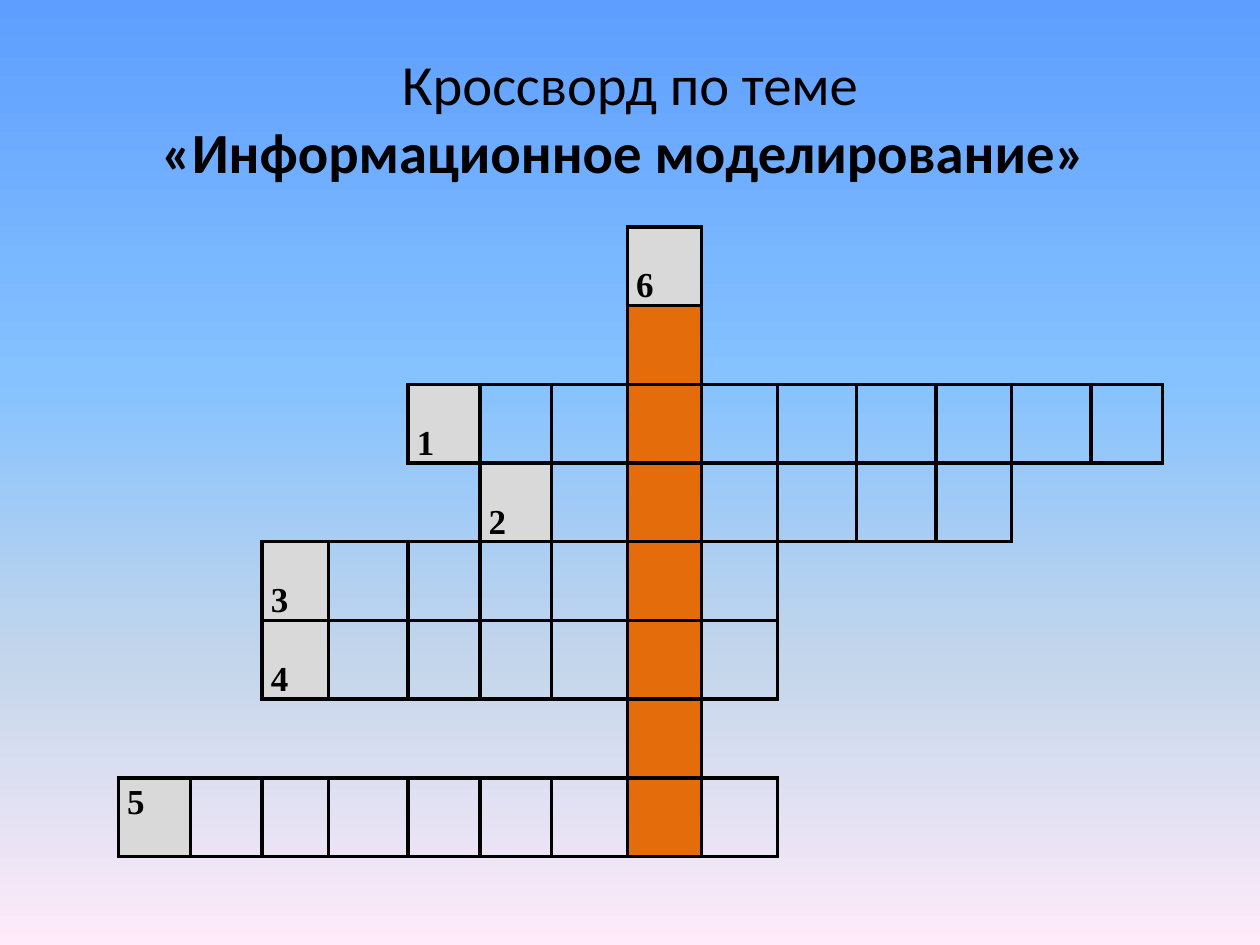
from lxml import etree
from pptx import Presentation
from pptx.dml.color import RGBColor
from pptx.enum.text import MSO_ANCHOR, PP_ALIGN
from pptx.oxml.ns import qn
from pptx.util import Inches, Pt

BLACK = RGBColor(0x00, 0x00, 0x00)
GREY = RGBColor(0xD9, 0xD9, 0xD9)
ORANGE = RGBColor(0xE4, 0x6C, 0x0A)
SKY_STOPS = [
    (0, RGBColor(0x5E, 0x9E, 0xFF)),
    (40, RGBColor(0x85, 0xC2, 0xFF)),
    (70, RGBColor(0xC4, 0xD6, 0xEB)),
    (100, RGBColor(0xFF, 0xEB, 0xFA)),
]
CENTER = PP_ALIGN.CENTER
MIDDLE, BOTTOM, TOP = MSO_ANCHOR.MIDDLE, MSO_ANCHOR.BOTTOM, MSO_ANCHOR.TOP
TITLE_ONLY = 5
NO_STYLE = "{2D5ABB26-0587-4C30-8999-92F81FD0307C}"
SIDES = {"a:lnL": (0, -1), "a:lnR": (0, 1), "a:lnT": (-1, 0), "a:lnB": (1, 0)}

COLUMN_WIDTHS = [0.57, 0.57, 0.53, 0.63, 0.57, 0.57, 0.6, 0.59, 0.6, 0.63, 0.63, 0.6, 0.63, 0.57]
ROW_COUNT = 8
ROW_HEIGHT = 0.625
KEY_COLUMN = 7
ACROSS_WORDS = [("1", 2, 4, 10), ("2", 3, 5, 7), ("3", 4, 2, 7), ("4", 5, 2, 7), ("5", 7, 0, 9)]


class CrosswordSlide:
    """Draws the parts of a crossword slide in one style."""

    def __init__(self, presentation):
        self.slide = presentation.slides.add_slide(presentation.slide_layouts[TITLE_ONLY])

    def background(self, stops):
        fill = self.slide.background.fill
        fill.gradient()
        fill.gradient_angle = 270
        stop_list = self.slide.element.find(".//" + qn("a:gsLst"))
        for stop in list(stop_list):
            stop_list.remove(stop)
        for position, color in stops:
            stop = etree.SubElement(stop_list, qn("a:gs"), pos=str(position * 1000))
            etree.SubElement(stop, qn("a:srgbClr"), val=str(color))

    def title(self, first_line, second_line):
        shape = self.slide.shapes.title
        shape.left, shape.top = Inches(0.5), Inches(0.3)
        shape.width, shape.height = Inches(9), Inches(1.25)
        shape.text_frame.vertical_anchor = MIDDLE
        paragraph = shape.text_frame.paragraphs[0]
        paragraph.alignment = CENTER
        paragraph.font.name = "Calibri"
        paragraph.add_run().text = first_line
        paragraph.add_line_break()
        strong = paragraph.add_run()
        strong.text = second_line
        strong.font.bold = True
        for run in paragraph.runs:
            run.font.size = Pt(32.4)
            run.font.color.rgb = BLACK

    def border(self, cell, side, visible):
        properties = cell._tc.get_or_add_tcPr()
        line = etree.SubElement(properties, qn(side), w=str(Pt(2.25) if visible else 0))
        if visible:
            fill = etree.SubElement(line, qn("a:solidFill"))
            etree.SubElement(fill, qn("a:srgbClr"), val=str(BLACK))
        else:
            etree.SubElement(line, qn("a:noFill"))

    def number(self, cell, text, anchor):
        cell.vertical_anchor = anchor
        cell.margin_left = cell.margin_right = Inches(0.07)
        cell.margin_top = cell.margin_bottom = 0
        paragraph = cell.text_frame.paragraphs[0]
        paragraph.line_spacing = 1.15
        run = paragraph.add_run()
        run.text = text
        run.font.name = "Times New Roman"
        run.font.size = Pt(20)
        run.font.bold = True
        run.font.color.rgb = BLACK

    def crossword(self, left, top):
        numbers = {(row, start): label for label, row, start, length in ACROSS_WORDS}
        numbers[0, KEY_COLUMN] = "6"
        squares = {(row, KEY_COLUMN) for row in range(ROW_COUNT)}
        for label, row, start, length in ACROSS_WORDS:
            squares.update((row, column) for column in range(start, start + length))

        frame = self.slide.shapes.add_table(
            ROW_COUNT, len(COLUMN_WIDTHS), Inches(left), Inches(top),
            Inches(sum(COLUMN_WIDTHS)), Inches(ROW_COUNT * ROW_HEIGHT))
        table = frame.table
        table.first_row = table.horz_banding = False
        table._tbl.tblPr.find(qn("a:tableStyleId")).text = NO_STYLE
        for column, width in zip(table.columns, COLUMN_WIDTHS):
            column.width = Inches(width)
        for row in range(ROW_COUNT):
            table.rows[row].height = Inches(ROW_HEIGHT)
            for column in range(len(COLUMN_WIDTHS)):
                cell, place = table.cell(row, column), (row, column)
                for side, (down, right) in SIDES.items():
                    neighbour = (row + down, column + right)
                    self.border(cell, side, place in squares or neighbour in squares)
                if place in numbers:
                    self.number(cell, numbers[place], TOP if row == ROW_COUNT - 1 else BOTTOM)
                    cell.fill.solid()
                    cell.fill.fore_color.rgb = GREY
                elif column == KEY_COLUMN:
                    cell.fill.solid()
                    cell.fill.fore_color.rgb = ORANGE
                else:
                    cell.fill.background()


def main():
    presentation = Presentation()
    presentation.slide_width, presentation.slide_height = Inches(10), Inches(7.5)
    page = CrosswordSlide(presentation)
    page.background(SKY_STOPS)
    page.title("Кроссворд по теме", "«Информационное моделирование» ")
    page.crossword(0.94, 1.8)
    presentation.save("out.pptx")


if __name__ == "__main__":
    main()
